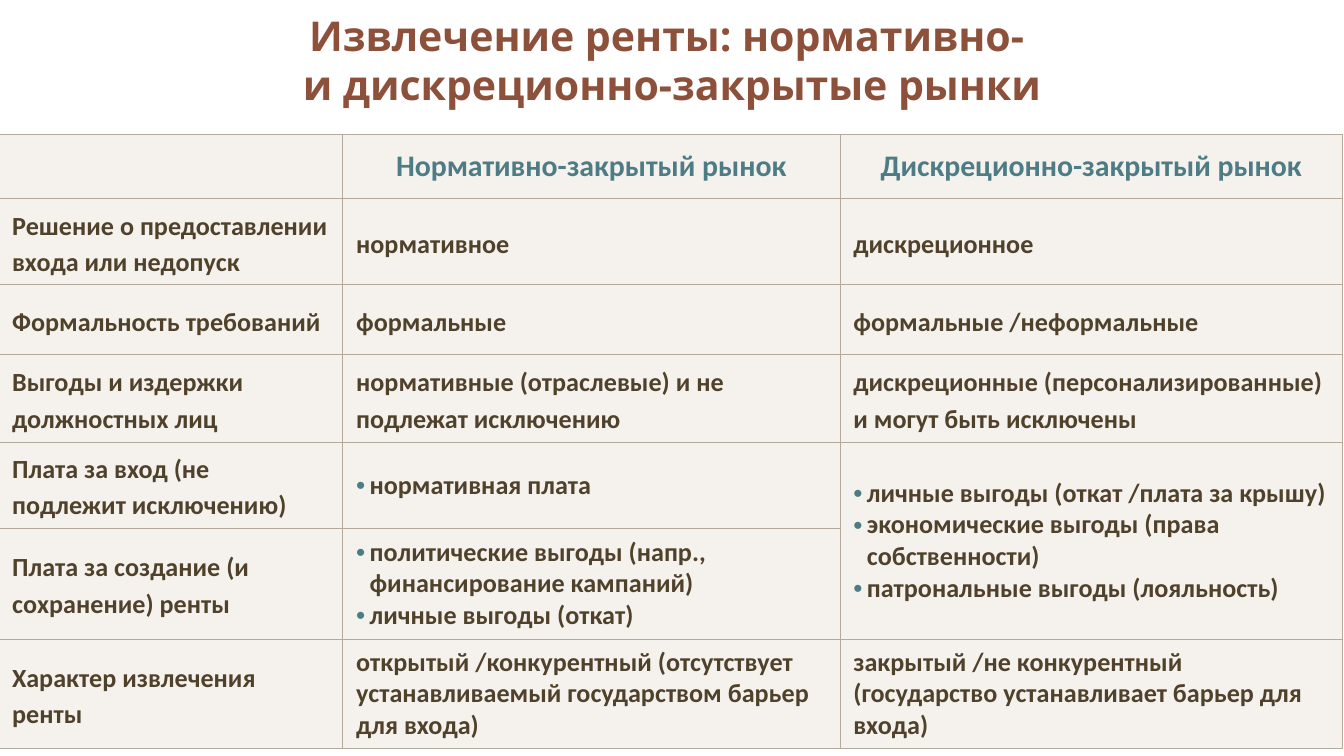
from dataclasses import dataclass

from lxml.etree import SubElement
from pptx import Presentation
from pptx.dml.color import RGBColor
from pptx.enum.text import MSO_ANCHOR, PP_ALIGN
from pptx.oxml.ns import qn
from pptx.util import Inches, Pt


@dataclass(frozen=True)
class Theme:
    title_font: str = "Open Sans"
    table_font: str = "Calibri"
    title_size: int = 22
    header_size: int = 16
    body_size: int = 14
    title_color: str = "8D503B"
    accent: str = "4D7C85"
    text: str = "50412B"
    cell_fill: str = "EFEAE4"
    cell_opacity: int = 60
    border: str = "B3A99D"
    outer_border: float = 1
    inner_border: float = 0.5


THEME = Theme()

TITLE = "Извлечение ренты: нормативно- \vи дискреционно-закрытые рынки"
COLUMN_WIDTHS = [2.56, 3.7, 3.74]
ROW_HEIGHTS = [0.48, 0.64, 0.52, 0.65, 0.64, 0.83, 0.81]
HEADERS = ["", "Нормативно-закрытый рынок", "Дискреционно-закрытый рынок"]

# A list is a bulleted cell; None is covered by the merged cell above
BODY = [
    ["Решение о предоставлении входа или недопуск", "нормативное", "дискреционное"],
    ["Формальность требований", "формальные", "формальные /неформальные"],
    ["Выгоды и издержки должностных лиц",
     "нормативные (отраслевые) и не подлежат исключению",
     "дискреционные (персонализированные) и могут быть исключены"],
    ["Плата за вход (не подлежит исключению)",
     ["нормативная плата"],
     ["личные выгоды (откат /плата за крышу)",
      "экономические выгоды (права собственности)",
      "патрональные выгоды (лояльность)"]],
    ["Плата за создание (и сохранение) ренты",
     ["политические выгоды (напр., финансирование кампаний)",
      "личные выгоды (откат)"],
     None],
    ["Характер извлечения ренты",
     "открытый /конкурентный (отсутствует устанавливаемый государством барьер для входа)",
     "закрытый /не конкурентный (государство устанавливает барьер для входа)"],
]


def style_font(paragraph, name, size, color):
    font = paragraph.font
    font.name, font.size, font.bold = name, Pt(size), True
    font.color.rgb = RGBColor.from_string(color)


def add_bullet(paragraph):
    properties = paragraph._p.get_or_add_pPr()
    properties.set("marL", str(Inches(0.1)))
    properties.set("indent", str(Inches(-0.1)))
    color = SubElement(properties, qn("a:buClr"))
    SubElement(color, qn("a:srgbClr"), val=THEME.accent)
    SubElement(properties, qn("a:buFont"), typeface="Arial")
    SubElement(properties, qn("a:buChar"), char="•")


def add_title(slide):
    box = slide.shapes.add_textbox(Inches(0.12), Inches(0.06), Inches(9.76), Inches(0.77))
    frame = box.text_frame
    frame.word_wrap = True
    frame.vertical_anchor = MSO_ANCHOR.MIDDLE
    paragraph = frame.paragraphs[0]
    paragraph.text = TITLE
    paragraph.alignment = PP_ALIGN.CENTER
    style_font(paragraph, THEME.title_font, THEME.title_size, THEME.title_color)


def style_cell(cell, outer_sides):
    """Draw the borders, heavier on the table's outer edge, and a translucent fill."""
    properties = cell._tc.get_or_add_tcPr()
    for side in "LRTB":
        width = THEME.outer_border if side in outer_sides else THEME.inner_border
        line = SubElement(properties, qn(f"a:ln{side}"), w=str(Pt(width)))
        fill = SubElement(line, qn("a:solidFill"))
        SubElement(fill, qn("a:srgbClr"), val=THEME.border)
    cell.fill.solid()
    cell.fill.fore_color.rgb = RGBColor.from_string(THEME.cell_fill)
    color = properties.find(qn("a:solidFill")).find(qn("a:srgbClr"))
    SubElement(color, qn("a:alpha"), val=str(THEME.cell_opacity * 1000))
    cell.vertical_anchor = MSO_ANCHOR.MIDDLE


def fill_header(cell, text):
    paragraph = cell.text_frame.paragraphs[0]
    paragraph.text = text
    paragraph.alignment = PP_ALIGN.CENTER
    style_font(paragraph, THEME.table_font, THEME.header_size, THEME.accent)


def fill_body(cell, content, spacious):
    bulleted = isinstance(content, list)
    frame = cell.text_frame
    for index, text in enumerate(content if bulleted else [content]):
        paragraph = frame.add_paragraph() if index else frame.paragraphs[0]
        paragraph.text = text
        if bulleted:
            add_bullet(paragraph)
        elif spacious:
            paragraph.line_spacing = 1.15
            paragraph.space_after = Pt(10)
        style_font(paragraph, THEME.table_font, THEME.body_size, THEME.text)


def add_comparison_table(slide):
    rows = [HEADERS] + BODY
    last_row, last_column = len(rows) - 1, len(HEADERS) - 1
    table = slide.shapes.add_table(
        len(rows), len(HEADERS), Inches(-0.01), Inches(1),
        Inches(sum(COLUMN_WIDTHS)), Inches(sum(ROW_HEIGHTS)),
    ).table
    table.first_row = table.horz_banding = False
    for column, width in zip(table.columns, COLUMN_WIDTHS):
        column.width = Inches(width)
    for row, height in zip(table.rows, ROW_HEIGHTS):
        row.height = Inches(height)

    for r, contents in enumerate(rows):
        for c, content in enumerate(contents):
            cell = table.cell(r, c)
            edges = {"L": c == 0, "R": c == last_column, "T": r == 0, "B": r == last_row}
            style_cell(cell, [side for side, outer in edges.items() if outer])
            if content is None:
                table.cell(r - 1, c).merge(cell)
            elif r == 0:
                if content:
                    fill_header(cell, content)
            else:
                # The long answers in the last row are set tight
                fill_body(cell, content, spacious=c == 0 or r < last_row)


def main():
    presentation = Presentation()
    # Widescreen, 16:9
    presentation.slide_width = Inches(10)
    presentation.slide_height = presentation.slide_width * 9 // 16
    slide = presentation.slides.add_slide(presentation.slide_layouts[6])
    add_title(slide)
    add_comparison_table(slide)
    presentation.save("out.pptx")


if __name__ == "__main__":
    main()
